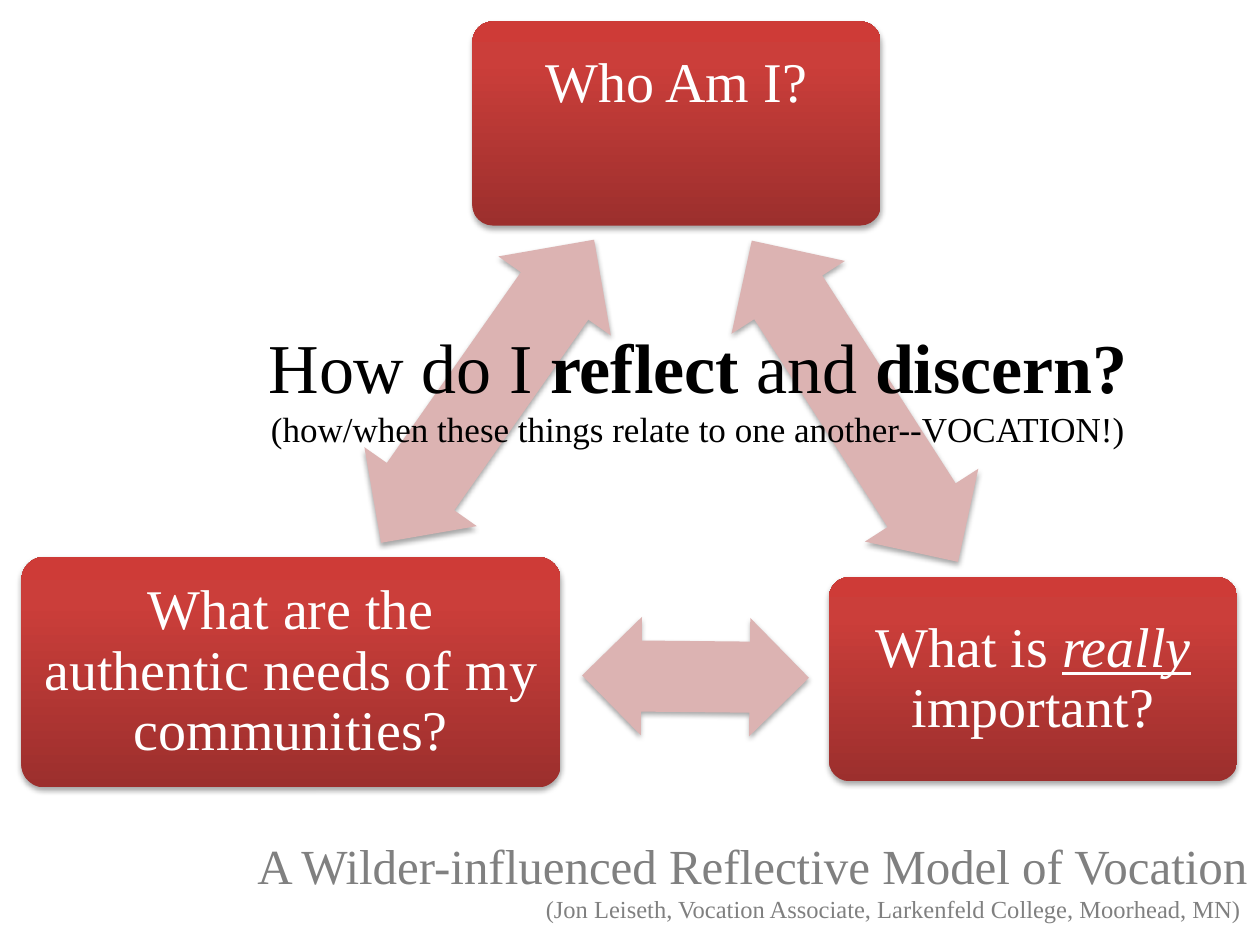
from pptx import Presentation
from pptx.dml.color import RGBColor
from pptx.enum.shapes import MSO_SHAPE
from pptx.enum.text import MSO_ANCHOR, PP_ALIGN
from pptx.oxml import parse_xml
from pptx.oxml.ns import nsdecls
from pptx.util import Inches, Pt

COLORS = {"dark": "9C2F2D", "mid": "CB3E3A", "light": "CE3B37", "arrow": "DCB3B2",
          "white": "FFFFFF", "black": "000000", "gray": "808080"}
FONT = "Times New Roman"


def add_text(p, text, size, color, bold=False, italic=False, underline=False):
    r = p.add_run()
    r.text = text
    f = r.font
    f.name, f.size = FONT, Pt(size)
    f.bold, f.italic, f.underline = bold, italic, underline
    f.color.rgb = RGBColor.from_string(COLORS[color])


def add_shadow(sp):
    sp._element.spPr.append(parse_xml(
        f'<a:effectLst {nsdecls("a")}><a:outerShdw blurRad="{Pt(3.1)}" dist="{Pt(1.8)}" '
        f'dir="5400000" rotWithShape="0"><a:srgbClr val="{COLORS["black"]}">'
        '<a:alpha val="35000"/></a:srgbClr></a:outerShdw></a:effectLst>'))


def add_gradient(sp):
    """Three-stop gradient, dark at the bottom."""
    stops = "".join(f'<a:gs pos="{pos * 1000}"><a:srgbClr val="{COLORS[name]}"/></a:gs>'
                    for pos, name in ((0, "dark"), (80, "mid"), (100, "light")))
    sp._element.spPr.append(parse_xml(
        f'<a:gradFill {nsdecls("a")} rotWithShape="1"><a:gsLst>{stops}</a:gsLst>'
        '<a:lin ang="16200000" scaled="0"/></a:gradFill>'))


def add_question(s, left, top, width, height, runs, top_inset=None):
    """Red question box; a top inset pins the text to the top."""
    sp = s.shapes.add_shape(MSO_SHAPE.ROUNDED_RECTANGLE, Inches(left), Inches(top),
                            Inches(width), Inches(height))
    sp.adjustments[0] = 0.1
    add_gradient(sp)
    sp.line.fill.background()
    add_shadow(sp)
    tf = sp.text_frame
    tf.word_wrap = True
    tf.margin_left = tf.margin_right = tf.margin_top = tf.margin_bottom = Inches(0.08)
    tf.vertical_anchor = MSO_ANCHOR.MIDDLE
    if top_inset:
        tf.margin_top = Inches(top_inset)
        tf.vertical_anchor = MSO_ANCHOR.TOP
    p = tf.paragraphs[0]
    p.alignment, p.line_spacing = PP_ALIGN.CENTER, 0.9
    for text, style in runs:
        add_text(p, text, 32, "white", **style)


def add_arrow(s, left, top, width, height, rotation):
    sp = s.shapes.add_shape(MSO_SHAPE.LEFT_RIGHT_ARROW, Inches(left), Inches(top),
                            Inches(width), Inches(height))
    sp.adjustments[0], sp.adjustments[1] = 0.6, 0.5
    sp.rotation = rotation
    sp.fill.solid()
    sp.fill.fore_color.rgb = RGBColor.from_string(COLORS["arrow"])
    sp.line.fill.background()
    add_shadow(sp)


def add_caption(s, left, top, width, height, lines, color, align):
    """Text box with one paragraph per (size, runs) line."""
    tf = s.shapes.add_textbox(Inches(left), Inches(top), Inches(width),
                              Inches(height)).text_frame
    tf.word_wrap = True
    for i, (size, runs) in enumerate(lines):
        p = tf.add_paragraph() if i else tf.paragraphs[0]
        p.alignment = align
        for text, bold in runs:
            add_text(p, text, size, color, bold=bold)


def build_cycle(s):
    """Three questions joined by double arrows."""
    emphasis = {"italic": True, "underline": True}
    add_question(s, 3.75, 0.17, 3.24, 1.62, [("Who Am I?", {})], top_inset=0.21)
    add_arrow(s, 5.27, 2.65, 3.03, 1.07, 57.3)
    add_question(s, 6.58, 4.58, 3.24, 1.62,
                 [("What is ", {}), ("really", emphasis), (" important?", {})])
    add_arrow(s, 4.62, 4.9, 1.8, 0.94, 180.6)
    add_question(s, 0.17, 4.42, 4.28, 1.83,
                 [("What are the authentic needs of my communities?", {})])
    add_arrow(s, 2.4, 2.56, 2.94, 1.09, 305.1)


def main():
    prs = Presentation()
    prs.slide_width, prs.slide_height = Inches(10), Inches(7.5)
    s = prs.slides.add_slide(prs.slide_layouts[6])

    # Model name and credit
    add_caption(s, 0.42, 6.58, 9.58, 0.92, [
        (28, [("A Wilder-influenced Reflective Model of Vocation", False)]),
        (14, [("(Jon Leiseth, Vocation Associate, Larkenfeld College, Moorhead, MN) ", False)]),
    ], "gray", PP_ALIGN.RIGHT)

    build_cycle(s)

    # Central question
    add_caption(s, 1.58, 2.52, 7.92, 1.11, [
        (40, [("How do I ", False), ("reflect ", True), ("and ", False), ("discern?", True)]),
        (20, [("(how/when these things relate to one another--VOCATION!)", False)]),
    ], "black", PP_ALIGN.CENTER)

    prs.save("out.pptx")


if __name__ == "__main__":
    main()
